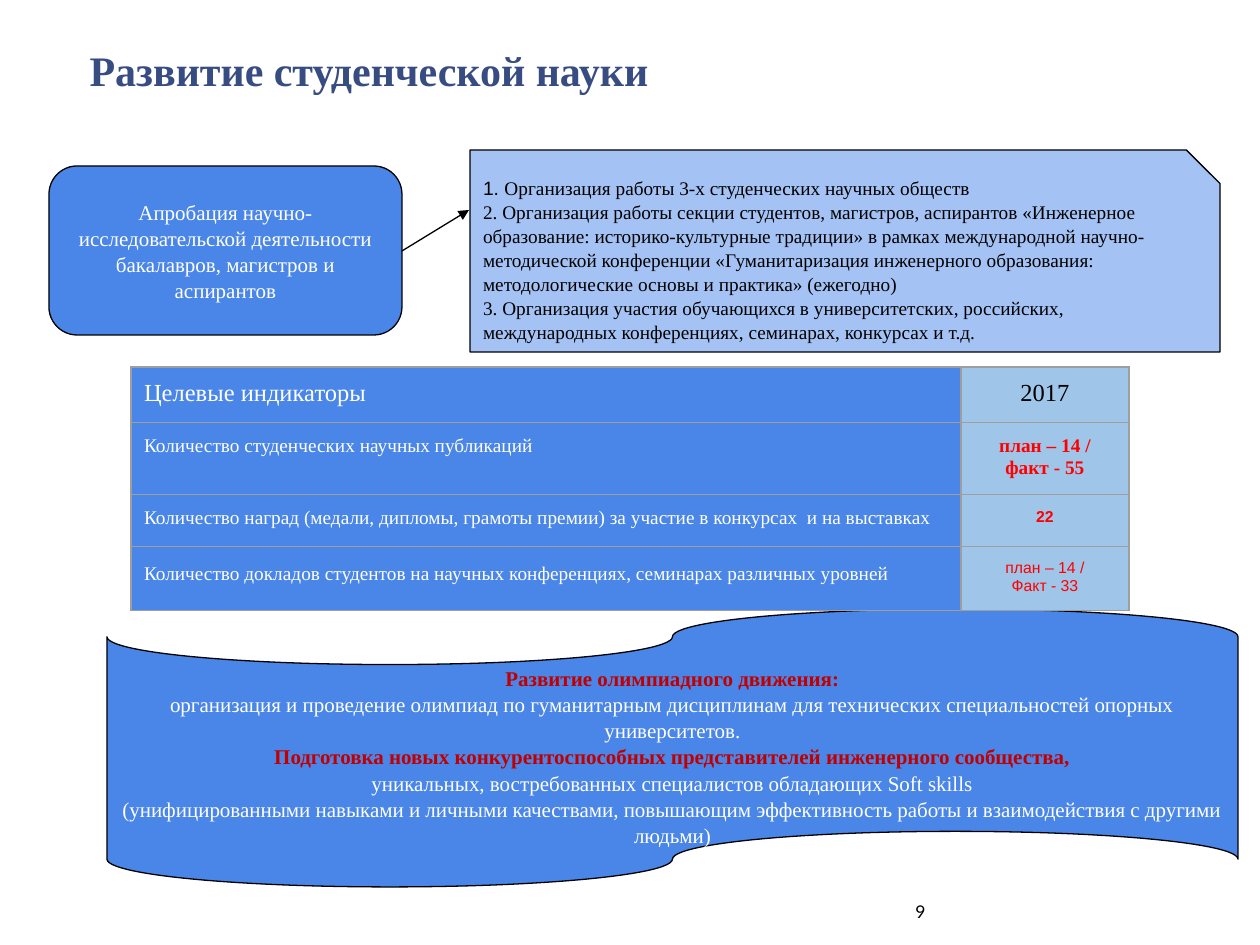
from dataclasses import dataclass
from typing import NamedTuple

from pptx import Presentation
from pptx.dml.color import RGBColor
from pptx.enum.shapes import MSO_CONNECTOR, MSO_SHAPE
from pptx.enum.text import MSO_ANCHOR, PP_ALIGN
from pptx.oxml.ns import qn
from pptx.util import Emu, Pt
from lxml.etree import SubElement

NAVY = RGBColor(0x37, 0x4C, 0x81)
BLUE = RGBColor(0x4A, 0x86, 0xE8)
PALE_BLUE = RGBColor(0xA4, 0xC2, 0xF4)
SKY = RGBColor(0x9F, 0xC5, 0xE8)
GREY = RGBColor(0x9E, 0x9E, 0x9E)
BLACK = RGBColor(0, 0, 0)
WHITE = RGBColor(0xFF, 0xFF, 0xFF)
RED = RGBColor(0xFF, 0, 0)
DARK_RED = RGBColor(0xC0, 0, 0)

SERIF, SANS = "Times New Roman", "Arial"
LEFT, CENTER, JUSTIFY = PP_ALIGN.LEFT, PP_ALIGN.CENTER, PP_ALIGN.JUSTIFY
PX_PER_INCH = 126
INSET = 13


class Box(NamedTuple):
    x: int
    y: int
    w: int
    h: int


class Span(NamedTuple):
    text: str
    size: int
    color: RGBColor
    bold: bool = False
    font: str = SERIF


@dataclass
class Para:
    spans: list[Span]
    align: PP_ALIGN = LEFT
    spacing: float = 1.0


@dataclass
class Panel:
    kind: MSO_SHAPE
    box: Box
    fill: RGBColor
    paras: list[Para]
    top_inset: int = INSET


def px(n: int) -> Emu:
    return Emu(round(n * 914400 / PX_PER_INCH))


def place(sp, box: Box) -> None:
    sp.left, sp.top, sp.width, sp.height = map(px, box)


def write(tf, paras: list[Para]) -> None:
    """Fill a text frame; a newline in a span becomes a line break."""
    for i, para in enumerate(paras):
        p = tf.paragraphs[0] if i == 0 else tf.add_paragraph()
        p.alignment = para.align
        p.line_spacing = para.spacing
        for span in para.spans:
            for j, line in enumerate(span.text.split("\n")):
                if j:
                    p.add_line_break()
                r = p.add_run()
                r.text = line
                r.font.name = span.font
                r.font.size = Pt(span.size)
                r.font.bold = span.bold
                r.font.color.rgb = span.color


def add_panel(s, panel: Panel) -> None:
    sp = s.shapes.add_shape(panel.kind, *map(px, panel.box))
    sp.shadow.inherit = False
    sp.fill.solid()
    sp.fill.fore_color.rgb = panel.fill
    sp.line.color.rgb = BLACK
    sp.line.width = Pt(0.75)
    tf = sp.text_frame
    tf.word_wrap = True
    tf.vertical_anchor = MSO_ANCHOR.MIDDLE
    tf.margin_left = tf.margin_right = tf.margin_bottom = px(INSET)
    tf.margin_top = px(panel.top_inset)
    write(tf, panel.paras)


def add_arrow(s, x1: int, y1: int, x2: int, y2: int) -> None:
    line = s.shapes.add_connector(MSO_CONNECTOR.STRAIGHT, *map(px, (x1, y1, x2, y2)))
    line.line.color.rgb = BLACK
    line.line.width = Pt(0.75)
    SubElement(line.line._get_or_add_ln(), qn("a:tailEnd"), type="triangle")
    SubElement(line._element.spPr, qn("a:effectLst"))


def style_cell(cell, fill: RGBColor) -> None:
    tc_pr = cell._tc.get_or_add_tcPr()
    for side in ("lnL", "lnR", "lnT", "lnB"):
        ln = SubElement(tc_pr, qn(f"a:{side}"), w=str(Pt(0.75)))
        color = SubElement(SubElement(ln, qn("a:solidFill")), qn("a:srgbClr"))
        color.set("val", str(GREY))
    cell.fill.solid()
    cell.fill.fore_color.rgb = fill
    cell.margin_left = cell.margin_right = px(INSET)
    cell.margin_top = cell.margin_bottom = px(INSET)


def add_indicators(s, x: int, y: int, widths: list[int], heights: list[int],
                   rows: list[tuple[list[Para], list[Para]]]) -> None:
    frame = s.shapes.add_table(len(rows), len(widths), px(x), px(y),
                               px(sum(widths)), px(sum(heights)))
    table = frame.table
    table.first_row = table.horz_banding = False
    for col, width in zip(table.columns, widths):
        col.width = px(width)
    for row, height, contents in zip(table.rows, heights, rows):
        row.height = px(height)
        for cell, paras, fill in zip(row.cells, contents, (BLUE, SKY)):
            style_cell(cell, fill)
            write(cell.text_frame, paras)


def label(text: str, size: int = 11, align: PP_ALIGN = LEFT, spacing: float = 1.0) -> list[Para]:
    return [Para([Span(text, size, WHITE)], align, spacing)]


def values(lines: list[str], size: int, color: RGBColor = RED,
           bold: bool = False, font: str = SERIF) -> list[Para]:
    return [Para([Span(t, size, color, bold, font)], CENTER) for t in lines]


def tape_para(text: str, heading: bool = False) -> Para:
    return Para([Span(text, 12, DARK_RED if heading else WHITE, heading)], CENTER, 1.04)


PANELS = [
    Panel(MSO_SHAPE.ROUNDED_RECTANGLE, Box(49, 166, 353, 169), BLUE, [
        Para([Span("Апробация научно-исследовательской деятельности бакалавров, "
                   "магистров и аспирантов", 12, WHITE)], CENTER, 1.04)]),
    Panel(MSO_SHAPE.SNIP_1_RECTANGLE, Box(470, 150, 750, 202), PALE_BLUE, [
        Para([Span("1. ", 11, BLACK, font=SANS),
              Span("Организация работы 3-х студенческих научных обществ\n"
                   "2. Организация работы секции студентов, магистров, аспирантов "
                   "«Инженерное образование: историко-культурные традиции» в рамках "
                   "международной научно-методической конференции «Гуманитаризация "
                   "инженерного образования: методологические основы и практика» "
                   "(ежегодно)\n"
                   "3. Организация участия обучающихся в университетских, российских, "
                   "международных конференциях, семинарах, конкурсах и т.д.",
                   11, BLACK)], LEFT, 1.04)]),
    Panel(MSO_SHAPE.FLOWCHART_PUNCHED_TAPE, Box(107, 609, 1131, 278), BLUE, [
        tape_para("Развитие олимпиадного движения:", True),
        tape_para("организация и проведение олимпиад по гуманитарным дисциплинам для "
                  "технических специальностей опорных университетов."),
        tape_para("Подготовка новых конкурентоспособных представителей инженерного "
                  "сообщества,", True),
        tape_para("уникальных, востребованных специалистов обладающих Soft skills"),
        tape_para("(унифицированными навыками и личными качествами, повышающим "
                  "эффективность работы и взаимодействия с другими людьми)"),
    ], top_inset=29),
]

INDICATORS = [
    (label("Целевые индикаторы", 14), values(["2017"], 14, BLACK)),
    (label("Количество студенческих научных публикаций"),
     values(["план – 14 /", "факт - 55"], 11, bold=True)),
    (label("Количество наград (медали, дипломы, грамоты премии) за участие в "
           "конкурсах  и на выставках"),
     values(["22"], 9, bold=True, font=SANS)),
    (label("Количество докладов студентов на научных конференциях, семинарах "
           "различных уровней", align=JUSTIFY, spacing=1.15),
     values(["план – 14 /", "Факт - 33"], 9, font=SANS)),
]


def main() -> None:
    prs = Presentation()
    prs.slide_width, prs.slide_height = px(1260), px(945)
    s = prs.slides.add_slide(prs.slide_layouts[5])

    title = s.shapes.title
    place(title, Box(77, 38, 937, 87))
    title.text_frame.vertical_anchor = MSO_ANCHOR.TOP
    write(title.text_frame, [Para([Span("Развитие студенческой науки", 24, NAVY, True)])])

    number = s.shapes.add_textbox(*map(px, Box(903, 887, 294, 50)))
    number.text_frame.word_wrap = True
    number.text_frame.vertical_anchor = MSO_ANCHOR.MIDDLE
    write(number.text_frame, [Para([Span("9", 10, BLACK, font="Lato")])])

    for panel in PANELS:
        add_panel(s, panel)
    add_arrow(s, 402, 251, 469, 210)
    add_indicators(s, 131, 367, [830, 168], [53, 68, 52, 60], INDICATORS)
    prs.save("out.pptx")


if __name__ == "__main__":
    main()
